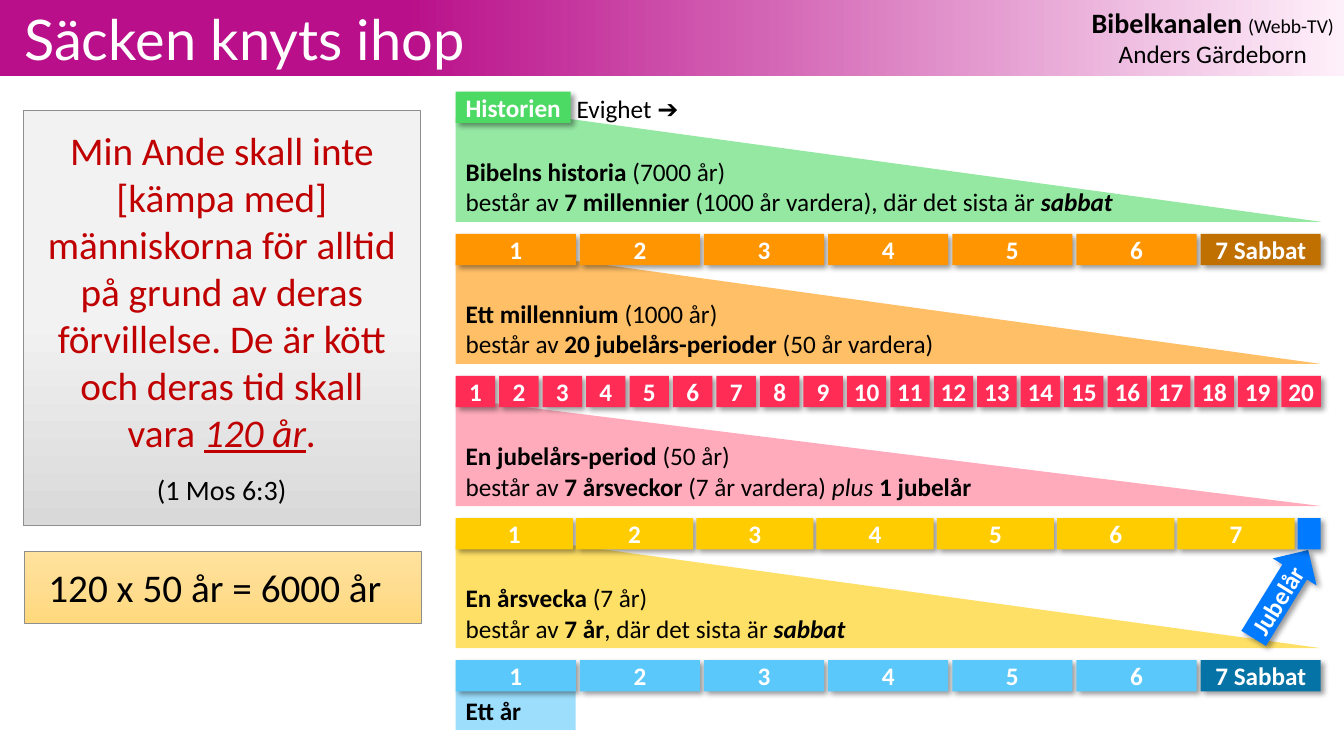
from lxml import etree
from pptx import Presentation, util as u
from pptx.dml.color import RGBColor
from pptx.enum import shapes, text
from pptx.oxml.ns import qn

COLORS = {
    "white": "FFFFFF", "black": "000000", "quote": "C00000", "border": "8E8E8E",
    "magenta": "B90F8A", "blush": "FEF0FA", "silver": "F2F2F2", "grey": "D9D9D9",
    "cream": "FFE29E", "sand": "FFDD90", "honey": "FFD97C",
    "green": "4CD964", "pale green": "94E8A2",
    "orange": "FF9500", "pale orange": "FFBF66", "brown": "BF7000",
    "red": "FF2D55", "pink": "FFABBB",
    "yellow": "FFCC00", "pale yellow": "FFE066", "blue": "007AFF",
    "sky": "5AC8FA", "pale sky": "9CDEFC", "deep sky": "0573A5",
}
LEFT, SPAN, BAR_H = 4.52, 8.58, 0.31
TOPS = [0.91 + 1.41 * i for i in range(5)]
CENTER, START = text.PP_ALIGN.CENTER, text.PP_ALIGN.LEFT
TOP, MIDDLE, BOTTOM = (text.MSO_ANCHOR.TOP, text.MSO_ANCHOR.MIDDLE,
                       text.MSO_ANCHOR.BOTTOM)
RECT = shapes.MSO_SHAPE.RECTANGLE


class SlideBuilder:
    def __init__(self, slide, face="Calibri"):
        self.s, self.face = slide, face

    def color(self, name):
        return RGBColor.from_string(COLORS[name])

    def set_text(self, sp, paras, size=18, color="black", align=START, anchor=MIDDLE,
                 ins=(0, 0, 0, 0), wrap=True, face=None):
        """Each paragraph is a list of (text, flags[, size]); flags are b, i, u."""
        tf = sp.text_frame
        tf.auto_size = text.MSO_AUTO_SIZE.NONE
        tf.word_wrap, tf.vertical_anchor = wrap, anchor
        tf.margin_left, tf.margin_top, tf.margin_right, tf.margin_bottom = map(u.Inches, ins)
        for i, runs in enumerate(paras):
            p = tf.add_paragraph() if i else tf.paragraphs[0]
            p.alignment = align
            p.font.name, p.font.size = face or self.face, u.Pt(size)
            p.font.color.rgb = self.color(color)
            for words, flags, *own_size in runs:
                if words == "\n":
                    p.add_line_break()
                    continue
                r = p.add_run()
                r.text = words
                r.font.bold = "b" in flags
                r.font.italic = "i" in flags
                r.font.underline = "u" in flags
                if own_size:
                    r.font.size = u.Pt(own_size[0])
        return tf

    def paint(self, sp, fill, line=None, shadow=False):
        sp.fill.solid()
        sp.fill.fore_color.rgb = self.color(fill)
        if line:
            sp.line.color.rgb = self.color(line)
            sp.line.width = u.Pt(0.5)
        else:
            sp.line.fill.background()
        sp.shadow.inherit = False
        if shadow:
            effects = sp._element.spPr.find(qn("a:effectLst"))
            outer = etree.SubElement(effects, qn("a:outerShdw"), blurRad=str(u.Pt(4)),
                                     dist=str(u.Pt(3)), dir="2700000", rotWithShape="0")
            black = etree.SubElement(outer, qn("a:srgbClr"), val=COLORS["black"])
            etree.SubElement(black, qn("a:alpha"), val="40000")

    def shape(self, x, y, w, h, fill, line=None, shadow=False, kind=RECT):
        sp = self.s.shapes.add_shape(kind, *map(u.Inches, (x, y, w, h)))
        self.paint(sp, fill, line, shadow)
        return sp

    def gradient(self, sp, stops, angle):
        sp.fill.gradient()
        sp.fill.gradient_angle = angle
        stop_list = sp._element.spPr.find(".//" + qn("a:gsLst"))
        for stop in list(stop_list):
            stop_list.remove(stop)
        for pos, name in stops:
            stop = etree.SubElement(stop_list, qn("a:gs"), pos=str(pos * 1000))
            etree.SubElement(stop, qn("a:srgbClr"), val=COLORS[name])

    def textbox(self, x, y, w, h, paras, **style):
        sp = self.s.shapes.add_textbox(*map(u.Inches, (x, y, w, h)))
        self.set_text(sp, paras, **style)

    def title(self, words):
        sp = self.s.shapes.title
        sp.left, sp.top, sp.width, sp.height = map(u.Inches, (0, 0, 13.33, 0.75))
        self.set_text(sp, [[(words, "")]], 40, "white", ins=(0.24, 0.05, 0.1, 0.05),
                      face="Lato")
        band = self.shape(0, 0, 13.33, 0.75, "magenta")
        self.gradient(band, [(1, "magenta"), (30, "magenta"), (100, "blush")], 0)
        sp._element.addprevious(band._element)

    def bar(self, x, y, w, fill, label):
        sp = self.shape(x, y, w, BAR_H, fill, shadow=True)
        if label:
            self.set_text(sp, [[(label, "b")]], color="white", align=CENTER)

    def bar_row(self, y, labels, fill, last_fill, span, gap):
        w = (span - gap * (len(labels) - 1)) / len(labels)
        for i, label in enumerate(labels):
            self.bar(LEFT + i * (w + gap), y, w,
                     last_fill if i == len(labels) - 1 else fill, label)

    def wedge(self, y, tip_x, fill, paras):
        """Area that widens from the first bar of a row to the whole row below."""
        corners = [(LEFT, y), (tip_x, y), (LEFT + SPAN, y + 1.02), (LEFT, y + 1.02)]
        points = [(u.Inches(px), u.Inches(py)) for px, py in corners]
        outline = self.s.shapes.build_freeform(*points[0])
        outline.add_line_segments(points[1:], close=True)
        sp = outline.convert_to_shape()
        self.paint(sp, fill)
        self.set_text(sp, paras, anchor=BOTTOM, ins=(0.1, 0.05, 0.1, 0.05))


def numbers(count):
    return [str(n) for n in range(1, count + 1)]


WEEK = numbers(6) + ["7 Sabbat"]
WEDGES = [
    (5.65, "pale green", [
        [("Bibelns historia", "b"), (" (7000 år)", "")],
        [("består av ", ""), ("7 millennier ", "b"),
         ("(1000 år vardera), där det sista är ", ""), ("sabbat", "bi")]]),
    (5.73, "pale orange", [
        [("Ett millennium ", "b"), ("(1000 år)", "")],
        [("består av ", ""), ("20 jubelårs-perioder ", "b"), ("(50 år vardera)", "")]]),
    (4.9, "pink", [
        [("En jubelårs-period ", "b"), ("(50 år)", "")],
        [("består av ", ""), ("7 årsveckor ", "b"), ("(7 år vardera) ", ""),
         ("plus ", "i"), ("1 jubelår", "b")]]),
    (5.69, "pale yellow", [
        [("En årsvecka ", "b"), ("(7 år)", "")],
        [("består av ", ""), ("7 år", "b"), (", där det sista är ", ""), ("sabbat", "bi")]]),
]
ROWS = [
    (WEEK, "orange", "brown", SPAN, 0.04),
    (numbers(20), "red", "red", SPAN, 0.04),
    (numbers(7), "yellow", "yellow", 8.32, 0.03),
    (WEEK, "sky", "deep sky", SPAN, 0.04),
]


def main():
    prs = Presentation()
    prs.slide_width, prs.slide_height = u.Inches(13.33), u.Inches(7.5)
    b = SlideBuilder(prs.slides.add_slide(prs.slide_layouts[5]))

    b.title("Säcken knyts ihop")
    b.textbox(10.75, 0.05, 2.56, 0.64,
              [[("Bibelkanalen", "b", 20), (" ", ""), ("(Webb-TV)", "", 14), ("\n", ""),
                ("Anders Gärdeborn", "")]],
              align=CENTER, anchor=TOP, ins=(0.1, 0, 0.1, 0), wrap=False)

    quote = b.shape(0.23, 1.09, 3.94, 4.12, "silver", "border")
    b.gradient(quote, [(0, "silver"), (50, "silver"), (100, "grey")], 270)
    tf = b.set_text(quote, [
        [("Min Ande skall inte [kämpa med] människorna för alltid på grund av deras "
          "förvillelse. De är kött och deras tid skall vara ", ""),
         ("120 år", "iu"), (".", "")],
        [("(1 Mos 6:3)", "")]],
        28, "quote", CENTER, TOP, (0.24, 0.16, 0.24, 0.16))
    reference = tf.paragraphs[1]
    reference.space_before = u.Pt(12)
    reference.font.size = u.Pt(20)
    reference.font.color.rgb = b.color("black")

    equation = b.shape(0.24, 5.47, 3.94, 0.71, "sand", "border")
    b.gradient(equation, [(0, "cream"), (50, "sand"), (100, "honey")], 270)
    b.set_text(equation, [[("120 x 50 år = 6000 år", "")]], 28, anchor=TOP,
               ins=(0.24, 0.12, 0.24, 0.12))

    for top, (tip_x, fill, paras) in zip(TOPS, WEDGES):
        b.wedge(top + 0.27, tip_x, fill, paras)
    year = b.shape(LEFT, 6.85, 1.19, 0.39, "pale sky")
    b.set_text(year, [[("Ett år", "b")]], ins=(0.1, 0.05, 0.1, 0.05))

    arrow = b.shape(12.19, 5.64, 1.03, 0.51, "blue", shadow=True,
                    kind=shapes.MSO_SHAPE.RIGHT_ARROW)
    arrow.adjustments[0], arrow.adjustments[1] = 0.56, 0.5
    arrow.rotation = 301.7
    b.set_text(arrow, [[("Jubelår", "b")]], color="white", align=CENTER)

    b.bar(LEFT, TOPS[0], 1.14, "green", "Historien")
    b.textbox(5.72, 0.93, 1.08, 0.3, [[("Evighet ➔", "")]], anchor=TOP, wrap=False)
    for top, row in zip(TOPS[1:], ROWS):
        b.bar_row(top, *row)
    b.bar(12.87, TOPS[3], 0.23, "blue", "")

    prs.save("out.pptx")


if __name__ == "__main__":
    main()
